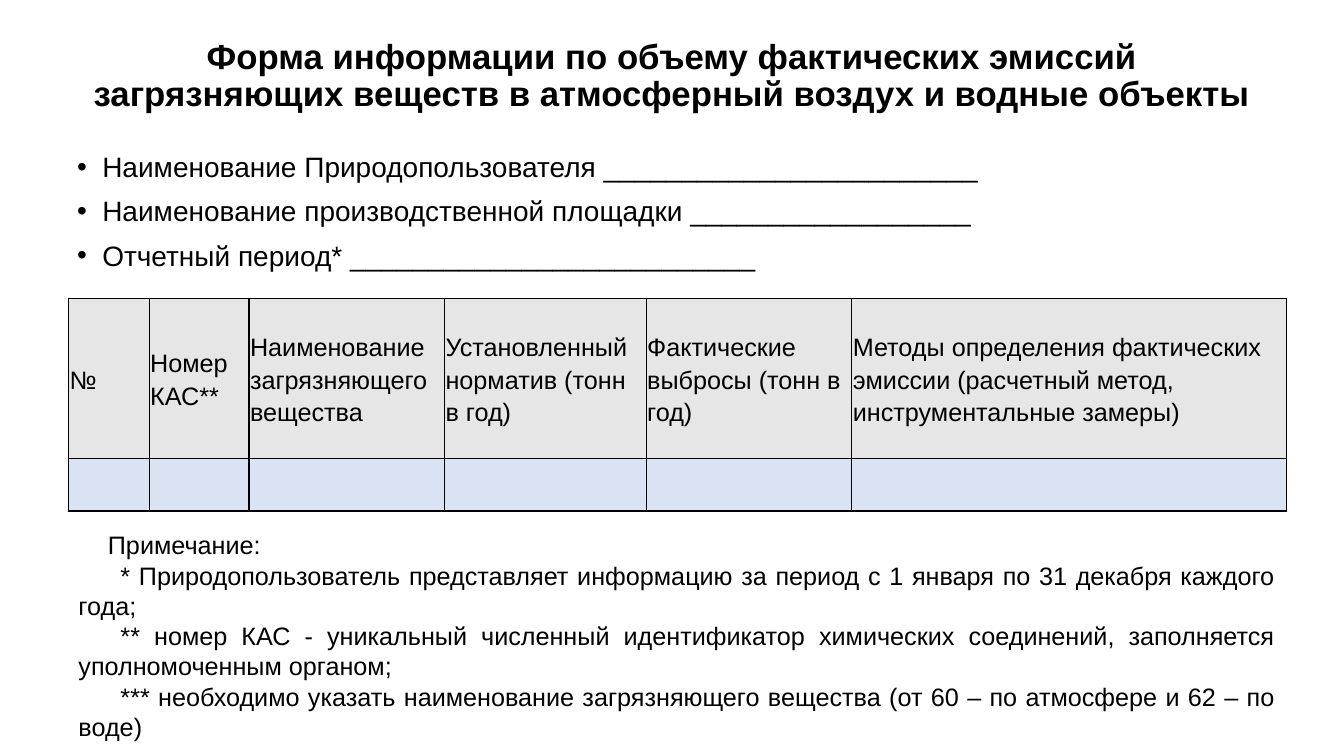
"""Build the slide with the form for reporting actual pollutant emissions."""
from lxml import etree
from pptx import Presentation
from pptx.dml.color import RGBColor
from pptx.enum.text import MSO_ANCHOR, PP_ALIGN
from pptx.oxml.ns import qn
from pptx.util import Pt

BLACK = RGBColor(0x00, 0x00, 0x00)
HEADER_GREY = RGBColor(0xE7, 0xE6, 0xE6)
ROW_BLUE = RGBColor(0xDA, 0xE3, 0xF3)
MIDDLE = MSO_ANCHOR.MIDDLE
LEFT, CENTER, JUSTIFY = PP_ALIGN.LEFT, PP_ALIGN.CENTER, PP_ALIGN.JUSTIFY

FIELDS = [
    "Наименование Природопользователя ________________________",
    "Наименование производственной площадки __________________",
    "Отчетный период* __________________________",
]
COLUMNS = [
    ("№", 57.6),
    ("Номер КАС**", 71.3),
    ("Наименование загрязняющего вещества", 139.7),
    ("Установленный норматив (тонн в год)", 144),
    ("Фактические выбросы (тонн в год)", 146.9),
    ("Методы определения фактических эмиссии (расчетный метод, инструментальные замеры)", 310.3),
]
ROW_HEIGHTS = [114.5, 37.5]
NOTES = [
    ("Примечание:", 21),
    ("* Природопользователь представляет информацию за период с 1 января по 31 декабря каждого года;", 30),
    ("** номер КАС - уникальный численный идентификатор химических соединений, "
     "заполняется уполномоченным органом;", 30),
    ("*** необходимо указать наименование загрязняющего вещества "
     "(от 60 – по атмосфере и 62 – по воде)", 30),
]


def write(para, text, size=18, bold=False, align=LEFT, spacing=1.0, before=0,
          margin=0, indent=0, bullet=None):
    span = para.add_run()
    span.text = text
    span.font.name = "Arial"
    span.font.size = Pt(size)
    span.font.bold = bold
    span.font.color.rgb = BLACK
    para.alignment = align
    para.line_spacing = spacing
    para.space_before = Pt(before)
    properties = para._p.get_or_add_pPr()
    properties.set("marL", str(Pt(margin)))
    properties.set("indent", str(Pt(indent)))
    if bullet:
        etree.SubElement(properties, qn("a:buFont"), typeface="Arial")
        etree.SubElement(properties, qn("a:buChar"), char=bullet)


def add_borders(cell):
    properties = cell._tc.get_or_add_tcPr()
    for position, side in enumerate(("lnL", "lnR", "lnT", "lnB")):
        line = etree.Element(qn(f"a:{side}"), w=str(Pt(1)))
        fill = etree.SubElement(line, qn("a:solidFill"))
        etree.SubElement(fill, qn("a:srgbClr"), val=str(BLACK))
        properties.insert(position, line)


deck = Presentation()
deck.slide_width, deck.slide_height = Pt(960), Pt(540)
page = deck.slides.add_slide(deck.slide_layouts[5])

title = page.shapes.title
title.left, title.top, title.width, title.height = Pt(48), Pt(21), Pt(864), Pt(68)
title.text_frame.word_wrap = True
title.text_frame.vertical_anchor = MIDDLE
write(title.text_frame.paragraphs[0],
      "Форма информации по объему фактических эмиссий загрязняющих "
      "веществ в атмосферный воздух и водные объекты",
      size=24.8, bold=True, align=CENTER, spacing=0.9)

fields_box = page.shapes.add_textbox(Pt(48), Pt(106), Pt(864), Pt(96))
fields_box.text_frame.word_wrap = True
for index, field in enumerate(FIELDS):
    frame = fields_box.text_frame
    para = frame.add_paragraph() if index else frame.paragraphs[0]
    write(para, field, size=20, spacing=0.9, before=10, margin=18, indent=-18, bullet="•")

table = page.shapes.add_table(len(ROW_HEIGHTS), len(COLUMNS), Pt(49), Pt(213),
                              Pt(869), Pt(152)).table
for row, height in zip(table.rows, ROW_HEIGHTS):
    row.height = Pt(height)
for index, (heading, width) in enumerate(COLUMNS):
    table.columns[index].width = Pt(width)
    write(table.cell(0, index).text_frame.paragraphs[0], heading, spacing=1.15)
    for row, color in enumerate((HEADER_GREY, ROW_BLUE)):
        cell = table.cell(row, index)
        cell.vertical_anchor = MIDDLE
        cell.margin_left = cell.margin_right = cell.margin_top = cell.margin_bottom = Pt(0.7)
        cell.fill.solid()
        cell.fill.fore_color.rgb = color
        add_borders(cell)

notes_box = page.shapes.add_textbox(Pt(49), Pt(374), Pt(869), Pt(160))
notes_box.text_frame.word_wrap = True
notes_box.text_frame.vertical_anchor = MIDDLE
for index, (note, indent) in enumerate(NOTES):
    frame = notes_box.text_frame
    para = frame.add_paragraph() if index else frame.paragraphs[0]
    write(para, note, align=JUSTIFY, indent=indent)

deck.save("out.pptx")
